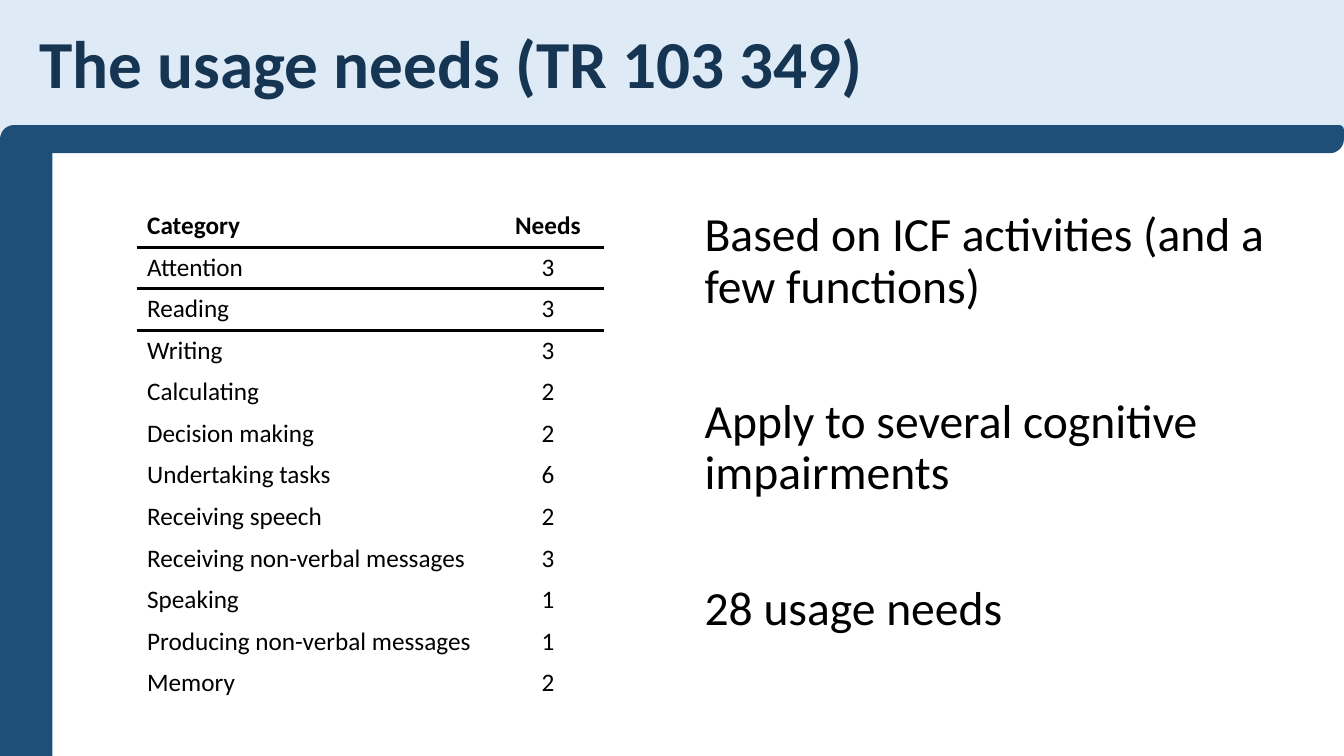
from lxml import etree
from pptx import Presentation
from pptx.dml.color import RGBColor
from pptx.enum.shapes import MSO_SHAPE
from pptx.enum.text import MSO_ANCHOR, PP_ALIGN
from pptx.oxml.ns import qn
from pptx.util import Inches, Pt

RECTANGLE = MSO_SHAPE.RECTANGLE
ROUNDED_DIAGONAL = MSO_SHAPE.ROUND_2_DIAG_RECTANGLE
MIDDLE = MSO_ANCHOR.MIDDLE
LEFT, CENTER = PP_ALIGN.LEFT, PP_ALIGN.CENTER

THEME = {
    "font": "Calibri",
    "pale": "DEEBF7",
    "navy": "1F4E79",
    "title": "153553",
    "text": "000000",
    "title_size": 48,
    "point_size": 34,
    "table_size": 18,
    "rule_width": 2.25,
}

NEEDS = [
    ("Category", "Needs"),
    ("Attention", "3"),
    ("Reading", "3"),
    ("Writing", "3"),
    ("Calculating", "2"),
    ("Decision making", "2"),
    ("Undertaking tasks", "6"),
    ("Receiving speech", "2"),
    ("Receiving non-verbal messages", "3"),
    ("Speaking", "1"),
    ("Producing non-verbal messages", "1"),
    ("Memory", "2"),
]
POINTS = [
    "Based on ICF activities (and a few functions)",
    "Apply to several cognitive impairments",
    "28 usage needs",
]


def write(paragraph, text, size, color, bold=False):
    paragraph.text = text
    formats = {"name": THEME["font"], "size": Pt(size), "bold": bold}
    for attribute, value in formats.items():
        setattr(paragraph.font, attribute, value)
    paragraph.font.color.rgb = RGBColor.from_string(THEME[color])


def add_rule(cell, side):
    rule = etree.Element(qn(f"a:{side}"), w=str(Pt(THEME["rule_width"])))
    fill = etree.SubElement(rule, qn("a:solidFill"))
    etree.SubElement(fill, qn("a:srgbClr"), val=THEME["text"])
    cell._tc.get_or_add_tcPr().insert(0, rule)


deck = Presentation()
deck.slide_width = Inches(13.33)
deck.slide_height = Inches(7.5)
slide = deck.slides.add_slide(deck.slide_layouts[6])

BANDS = [
    (RECTANGLE, 0, 13.33, 1.32, "pale", []),
    (RECTANGLE, 1.49, 0.52, 6.01, "navy", []),
    (ROUNDED_DIAGONAL, 1.24, 13.33, 0.28, "navy", [0.5, 0.17]),
]
for kind, top, width, height, color, corners in BANDS:
    band = slide.shapes.add_shape(kind, 0, Inches(top), Inches(width), Inches(height))
    band.shadow.inherit = False
    band.fill.solid()
    band.fill.fore_color.rgb = RGBColor.from_string(THEME[color])
    band.line.fill.background()
    for index, corner in enumerate(corners):
        band.adjustments[index] = corner

title = slide.shapes.add_textbox(0, 0, Inches(13.33), Inches(1.32)).text_frame
title.word_wrap = True
title.vertical_anchor = MIDDLE
title.margin_left = Inches(0.39)
heading = title.paragraphs[0]
heading.line_spacing = 0.9
write(heading, "The usage needs (TR 103 349)", THEME["title_size"], "title", True)

points = slide.shapes.add_textbox(Inches(6.89), Inches(2.04), Inches(6.02), Inches(4.95)).text_frame
points.word_wrap = True
for index, point in enumerate(POINTS):
    paragraph = points.add_paragraph() if index else points.paragraphs[0]
    paragraph.line_spacing = 0.9
    paragraph.space_after = Pt(60)
    write(paragraph, point, THEME["point_size"], "text")

needs = slide.shapes.add_table(
    len(NEEDS), 2, Inches(1.36), Inches(2.04), Inches(4.63), Inches(4.95)
).table
needs.first_row = False
needs.horz_banding = False
for column, width in zip(needs.columns, (3.52, 1.11)):
    column.width = Inches(width)
for row, entry in enumerate(NEEDS):
    for column, (text, alignment) in enumerate(zip(entry, (LEFT, CENTER))):
        cell = needs.cell(row, column)
        cell.fill.background()
        if row < 2:
            add_rule(cell, "lnB")
        if row in (1, 2):
            add_rule(cell, "lnT")
        paragraph = cell.text_frame.paragraphs[0]
        paragraph.alignment = alignment
        write(paragraph, text, THEME["table_size"], "text", row == 0)

deck.save("out.pptx")
